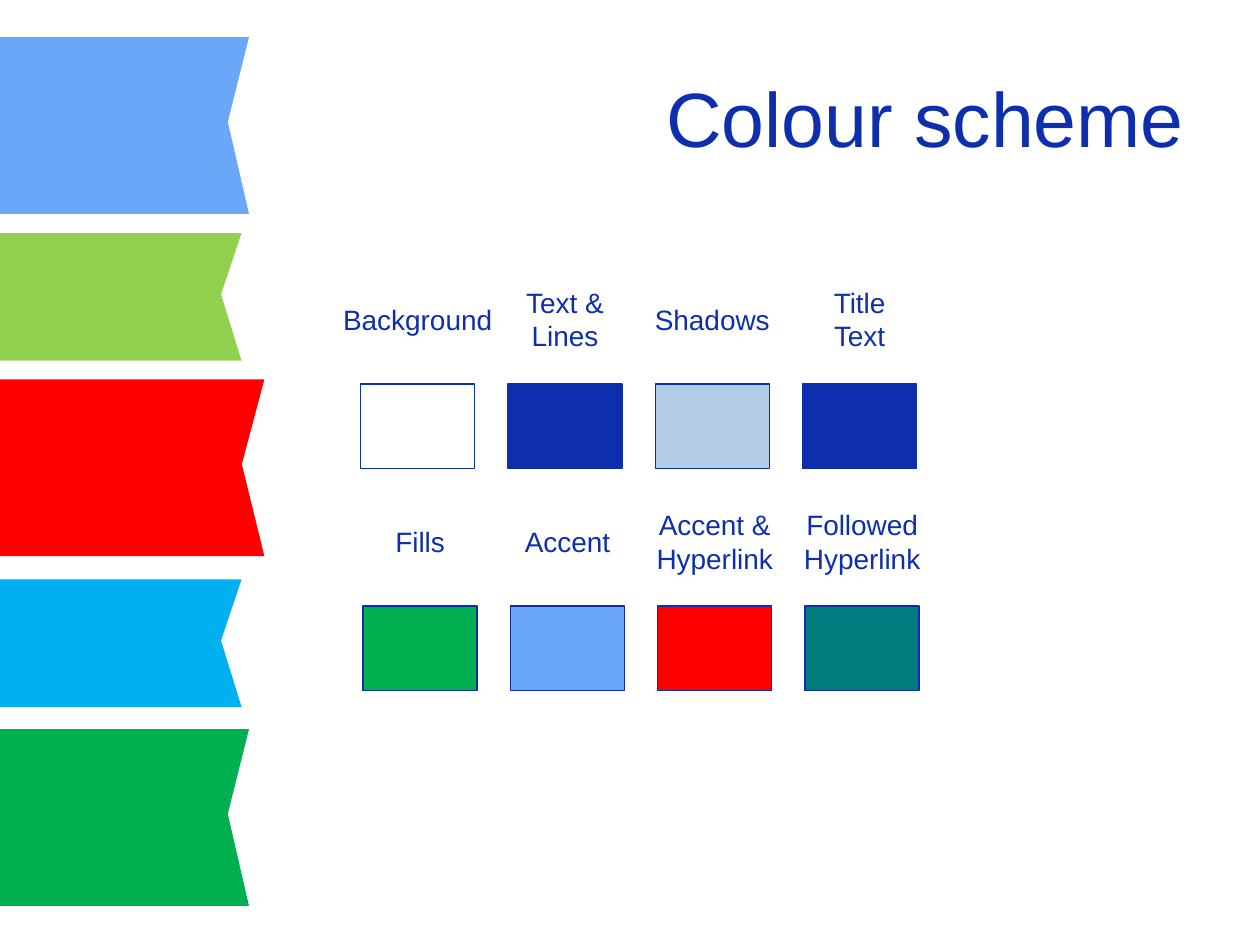
from pptx import Presentation
from pptx.dml.color import RGBColor
from pptx.enum.shapes import MSO_SHAPE
from pptx.enum.text import MSO_ANCHOR, MSO_AUTO_SIZE, PP_ALIGN
from pptx.util import Cm, Pt

INK = "0E2FAD"
RIBBONS = [
    ("00B050", 14.7, 5.02, 3.56),
    ("FF0000", 7.65, 5.33, 3.56),
    ("92D050", 4.7, 4.87, 2.57),
    ("6BA7F8", 0.75, 5.02, 3.56),
    ("00B0F0", 11.68, 4.87, 2.57),
]
ROWS = [
    (7.27, 7.74, [
        ("Background", "FFFFFF", 3.54),
        ("Text &\nLines", INK, 2.14),
        ("Shadows", "B3CCE6", 2.86),
        ("Title\vText", INK, 1.62),
    ]),
    (7.32, 12.22, [
        ("Fills", "00B050", 1.54),
        ("Accent", "6BA7F8", 2.28),
        ("Accent &\nHyperlink", "FF0000", 2.94),
        ("Followed\nHyperlink", "007B7E", 2.94),
    ]),
]
PITCH, WIDE, HIGH = 2.97, 2.3, 1.7
RISE = 1.3


def paint(part, color):
    part.solid()
    part.fore_color.rgb = RGBColor.from_string(color)


def write(frame, text, size=16, align=PP_ALIGN.CENTER):
    frame.text = text
    for para in frame.paragraphs:
        para.alignment = align
        for run in para.runs:
            run.font.name = "Arial"
            run.font.size = Pt(size)
            run.font.color.rgb = RGBColor.from_string(INK)


def ribbon(shapes, color, top, wide, high):
    tip = wide * 0.915, top + high * 0.48
    points = [(wide, top), tip, (wide, top + high), (0, top + high)]
    build = shapes.build_freeform(0, Cm(top))
    build.add_line_segments([(Cm(x), Cm(y)) for x, y in points], close=True)
    shape = build.convert_to_shape()
    shape.shadow.inherit = False
    paint(shape.fill, color)
    shape.line.fill.background()


def swatch(shapes, left, top, color):
    shape = shapes.add_shape(
        MSO_SHAPE.RECTANGLE, Cm(left), Cm(top), Cm(WIDE), Cm(HIGH))
    shape.shadow.inherit = False
    paint(shape.fill, color)
    paint(shape.line.fill, INK)
    shape.line.width = Pt(0.75)


def label(shapes, mid, center, text, wide):
    high = 0.26 + 0.68 * len(text.splitlines())
    box = shapes.add_textbox(
        Cm(mid - wide / 2), Cm(center - high / 2), Cm(wide), Cm(high))
    frame = box.text_frame
    frame.word_wrap = False
    frame.auto_size = MSO_AUTO_SIZE.SHAPE_TO_FIT_TEXT
    write(frame, text)


def main():
    deck = Presentation()
    deck.slide_width, deck.slide_height = Cm(25.4), Cm(19.05)
    slide = deck.slides.add_slide(deck.slide_layouts[5])
    paint(slide.background.fill, "FFFFFF")
    shapes = slide.shapes

    for band in RIBBONS:
        ribbon(shapes, *band)

    title = shapes.title
    title.left, title.top = Cm(1.27), Cm(0.76)
    title.width, title.height = Cm(22.86), Cm(3.18)
    title.text_frame.vertical_anchor = MSO_ANCHOR.MIDDLE
    write(title.text_frame, "Colour scheme", size=44, align=PP_ALIGN.RIGHT)
    title.element.getparent().append(title.element)

    for start, top, cells in ROWS:
        for col, (text, color, wide) in enumerate(cells):
            left = start + col * PITCH
            swatch(shapes, left, top, color)
            label(shapes, left + WIDE / 2, top - RISE, text, wide)

    deck.save("out.pptx")


if __name__ == "__main__":
    main()
